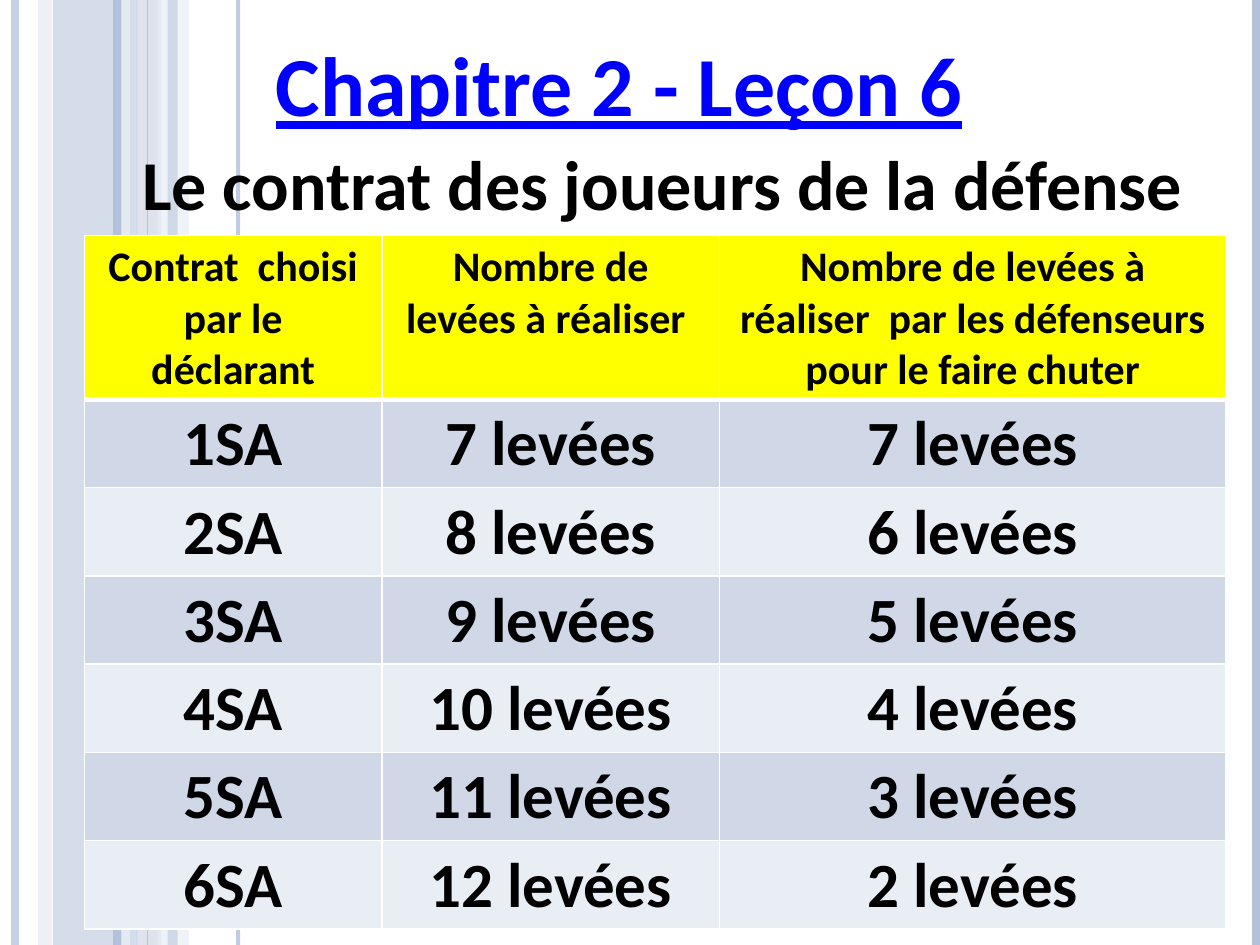
from dataclasses import dataclass

from lxml import etree
from pptx import Presentation
from pptx.dml.color import RGBColor
from pptx.enum.shapes import MSO_CONNECTOR, MSO_SHAPE
from pptx.enum.text import MSO_ANCHOR, PP_ALIGN
from pptx.oxml.ns import qn
from pptx.slide import Slide
from pptx.util import Inches, Pt

RECTANGLE = MSO_SHAPE.RECTANGLE
STRAIGHT = MSO_CONNECTOR.STRAIGHT
LEFT = PP_ALIGN.LEFT
CENTER = PP_ALIGN.CENTER
TOP = MSO_ANCHOR.TOP

WHITE = RGBColor(0xFF, 0xFF, 0xFF)
BLACK = RGBColor(0x00, 0x00, 0x00)
BLUE = RGBColor(0x00, 0x00, 0xFF)
YELLOW = RGBColor(0xFF, 0xFF, 0x00)
STEEL = RGBColor(0xB3, 0xC1, 0xDB)
MIST = RGBColor(0xD0, 0xD8, 0xE8)
PALE = RGBColor(0xE9, 0xED, 0xF4)

SLIDE_WIDTH = 10
SLIDE_HEIGHT = 7.5
HEADER_HEIGHT = 1.3
ROW_HEIGHT = 0.7

BANDS = [
    (0.42, 0.67, STEEL, 54),
    (0.3, 0.11, MIST, 36),
    (1.08, 0.2, MIST, 70),
    (1.25, 0.25, PALE, 71),
    (1.33, 0.08, STEEL, 51),
]
STRIPES = [
    (0.12, STEEL, 4.5, 73),
    (1, PALE, 4.5, 83),
    (0.93, STEEL, 4.5, 100),
    (1.89, STEEL, 2.25, 82),
    (1.17, STEEL, 0.75, 100),
    (9.97, STEEL, 4.5, 100),
]
HEADINGS = [
    "Contrat  choisi par le déclarant",
    "Nombre de levées à réaliser ",
    "Nombre de levées à réaliser  par les défenseurs pour le faire chuter",
]
CONTRACTS = [
    (f"{level}SA", f"{level + 6} levées", f"{8 - level} levées")
    for level in range(1, 7)
]


@dataclass
class LessonSlide:
    slide: Slide
    font: str = "Calibri"

    def set_alpha(self, element, percent):
        if percent < 100:
            color = element.find(".//" + qn("a:srgbClr"))
            etree.SubElement(color, qn("a:alpha"), val=str(percent * 1000))

    def band(self, left, width, color, opacity):
        band = self.slide.shapes.add_shape(
            RECTANGLE, Inches(left), 0, Inches(width), Inches(SLIDE_HEIGHT))
        band.shadow.inherit = False
        band.fill.solid()
        band.fill.fore_color.rgb = color
        band.line.fill.background()
        self.set_alpha(band.element.spPr, opacity)

    def stripe(self, x, color, weight, opacity):
        stripe = self.slide.shapes.add_connector(
            STRAIGHT, Inches(x), 0, Inches(x), Inches(SLIDE_HEIGHT))
        stripe.line.color.rgb = color
        stripe.line.width = Pt(weight)
        properties = stripe.element.spPr
        self.set_alpha(properties, opacity)
        etree.SubElement(properties, qn("a:effectLst"))

    def add_text(self, frame, text, size, color=BLACK, align=CENTER, underline=False):
        frame.word_wrap = True
        paragraph = frame.paragraphs[0]
        paragraph.alignment = align
        run = paragraph.add_run()
        run.text = text
        run.font.name = self.font
        run.font.size = Pt(size)
        run.font.bold = True
        run.font.underline = underline
        run.font.color.rgb = color

    def title(self, text, left, top, width, height):
        title = self.slide.shapes.title
        title.left, title.top = Inches(left), Inches(top)
        title.width, title.height = Inches(width), Inches(height)
        title.text_frame.vertical_anchor = TOP
        self.add_text(title.text_frame, text, 48, BLUE, LEFT, True)

    def subtitle(self, text, left, top, width, height):
        subtitle = self.slide.shapes.add_textbox(
            Inches(left), Inches(top), Inches(width), Inches(height))
        self.add_text(subtitle.text_frame, text, 40)

    def cell(self, cell, text, size, fill, edges):
        self.add_text(cell.text_frame, text, size)
        properties = cell._tc.get_or_add_tcPr()
        for side, weight in edges.items():
            edge = etree.SubElement(properties, qn("a:" + side), w=str(Pt(weight)))
            solid = etree.SubElement(edge, qn("a:solidFill"))
            etree.SubElement(solid, qn("a:srgbClr"), val=str(WHITE))
        cell.fill.solid()
        cell.fill.fore_color.rgb = fill

    def table(self, headings, rows, left, top, widths):
        height = HEADER_HEIGHT + ROW_HEIGHT * len(rows)
        table = self.slide.shapes.add_table(
            len(rows) + 1, len(headings), Inches(left), Inches(top),
            Inches(sum(widths)), Inches(height)).table
        for column, width in zip(table.columns, widths):
            column.width = Inches(width)
        for index, texts in enumerate([headings, *rows]):
            is_header = index == 0
            table.rows[index].height = Inches(HEADER_HEIGHT if is_header else ROW_HEIGHT)
            size = 24 if is_header else 36
            fill = YELLOW if is_header else (MIST if index % 2 else PALE)
            edges = {"lnL": 1, "lnR": 1, "lnT": 3 if index == 1 else 1,
                     "lnB": 3 if is_header else 1}
            for column, text in enumerate(texts):
                self.cell(table.cell(index, column), text, size, fill, edges)


def main():
    presentation = Presentation()
    presentation.slide_width = Inches(SLIDE_WIDTH)
    presentation.slide_height = Inches(SLIDE_HEIGHT)
    lesson = LessonSlide(presentation.slides.add_slide(presentation.slide_layouts[5]))
    for band in BANDS:
        lesson.band(*band)
    for stripe in STRIPES:
        lesson.stripe(*stripe)
    lesson.title("Chapitre 2 - Leçon 6", 2.09, 0.21, 7.48, 0.91)
    lesson.subtitle("Le contrat des joueurs de la défense ", 0.83, 1.07, 8.98, 0.77)
    lesson.table(HEADINGS, CONTRACTS, 0.67, 1.87, [2.36, 2.68, 4.02])
    presentation.save("out.pptx")


if __name__ == "__main__":
    main()
